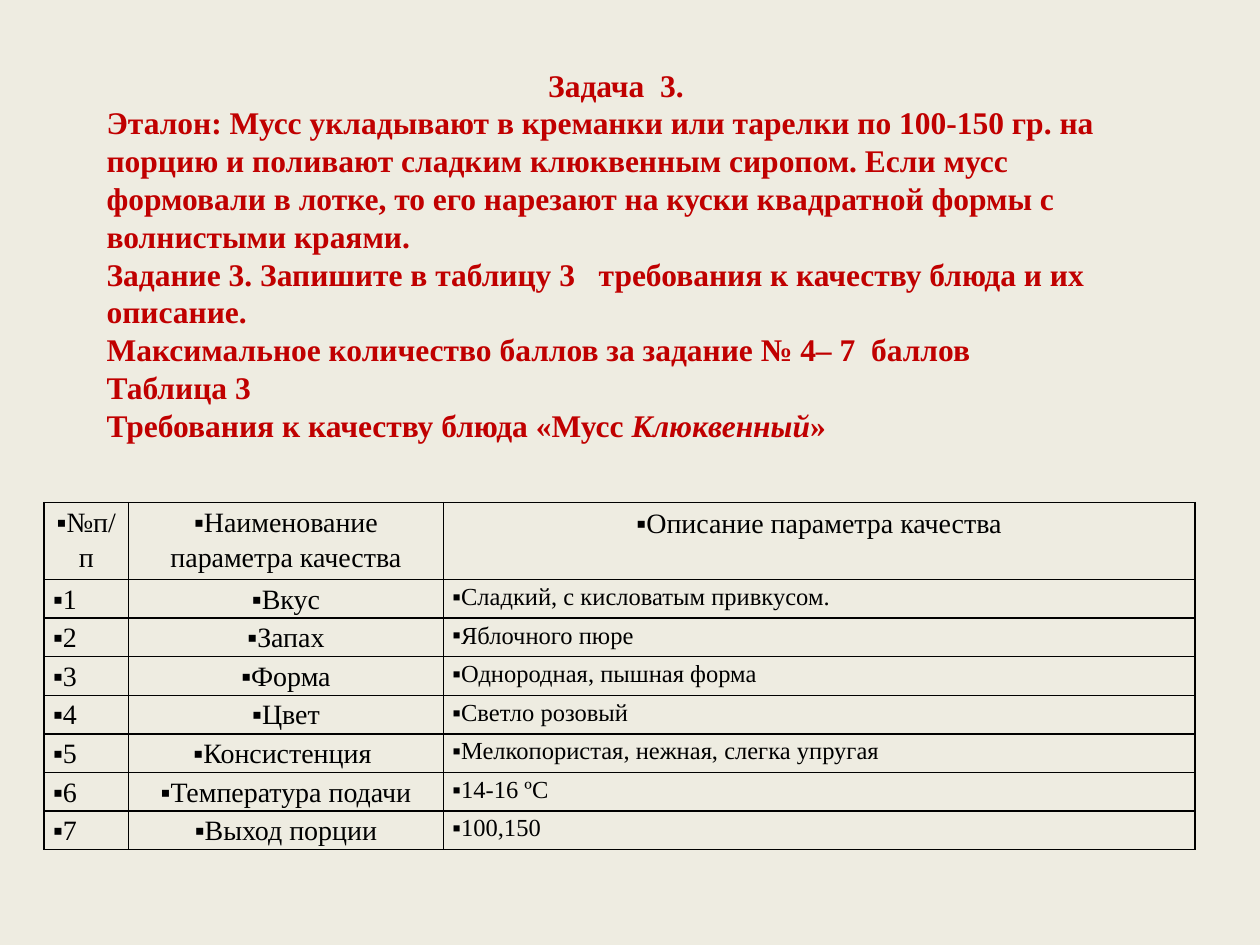
from dataclasses import dataclass

from lxml.etree import SubElement
from pptx import Presentation
from pptx.dml.color import RGBColor
from pptx.enum.text import MSO_ANCHOR, PP_ALIGN as Align
from pptx.oxml.ns import qn
from pptx.util import Cm, Pt


@dataclass(frozen=True)
class Theme:
    font: str = "Times New Roman"
    background: str = "EEECE1"
    accent: str = "C00000"
    ink: str = "000000"
    task_size: int = 18
    table_size: int = 16
    answer_size: int = 14
    border: float = 1


THEME = Theme()

TASK = [
    [("Задача  3. ", False)],
    [("Эталон: Мусс укладывают в креманки или тарелки по 100-150 гр. на порцию "
      "и поливают сладким клюквенным сиропом. Если мусс формовали в лотке, то его "
      "нарезают на куски квадратной формы с волнистыми краями.", False)],
    [("Задание 3. Запишите в таблицу 3   требования к качеству блюда и их описание.", False)],
    [("Максимальное количество баллов за задание № 4– 7  баллов", False)],
    [("Таблица 3", False)],
    [("Требования к качеству блюда «Мусс ", False), ("Клюквенный", True), ("»", False)],
]

HEADER = ("№п/п", "Наименование параметра качества", "Описание параметра качества")
QUALITIES = [
    ("Вкус", "Сладкий, с кисловатым привкусом."),
    ("Запах", "Яблочного пюре"),
    ("Форма", "Однородная, пышная форма"),
    ("Цвет", "Светло розовый"),
    ("Консистенция ", "Мелкопористая, нежная, слегка упругая"),
    ("Температура подачи", "14-16 ºС"),
    ("Выход порции", "100,150"),
]


def add_run(p, text, size, color, bold=False, italic=False):
    r = p.add_run()
    r.text = text
    r.font.name = THEME.font
    r.font.size = Pt(size)
    r.font.bold = bold
    r.font.italic = italic
    r.font.color.rgb = RGBColor.from_string(color)


def add_bullet(p):
    pPr = p._p.get_or_add_pPr()
    pPr.set("marL", "0")
    pPr.set("indent", "0")
    color = SubElement(pPr, qn("a:buClr"))
    SubElement(color, qn("a:srgbClr"), val=THEME.ink)
    SubElement(pPr, qn("a:buFont"), typeface=THEME.font)
    SubElement(pPr, qn("a:buChar"), char="▪")


def add_borders(cell):
    tcPr = cell._tc.get_or_add_tcPr()
    for side in ("lnL", "lnR", "lnT", "lnB"):
        line = SubElement(tcPr, qn(f"a:{side}"), w=str(Pt(THEME.border)))
        fill = SubElement(line, qn("a:solidFill"))
        SubElement(fill, qn("a:srgbClr"), val=THEME.ink)


def fill_cell(cell, text, size, centred, compact=True):
    """Compact cells have narrow margins and looser lines."""
    add_borders(cell)
    cell.fill.background()
    p = cell.text_frame.paragraphs[0]
    p.alignment = Align.CENTER if centred else Align.LEFT
    p.space_before = Pt(size * 0.2)
    if compact:
        p.line_spacing = 1.15
        cell.margin_left = cell.margin_right = Cm(0.18)
        cell.margin_top = cell.margin_bottom = 0
    add_bullet(p)
    add_run(p, text, size, THEME.ink)


def add_task(s, left, top, width, height):
    tf = s.shapes.add_textbox(left, top, width, height).text_frame
    tf.word_wrap = True
    tf.vertical_anchor = MSO_ANCHOR.TOP
    for i, runs in enumerate(TASK):
        p = tf.add_paragraph() if i else tf.paragraphs[0]
        p.alignment = Align.LEFT if i else Align.CENTER
        for text, italic in runs:
            add_run(p, text, THEME.task_size, THEME.accent, True, italic)


def add_quality_table(s, left, top, width, height):
    rows = len(QUALITIES) + 1
    table = s.shapes.add_table(rows, len(HEADER), left, top, width, height).table
    table.first_row = table.horz_banding = False

    number_width, name_width = Cm(1.7), Cm(6.35)
    widths = (number_width, name_width, width - number_width - name_width)
    for column, column_width in zip(table.columns, widths):
        column.width = column_width
    # The header row is twice as high as the others
    unit = height // (rows + 1)
    for i, row in enumerate(table.rows):
        row.height = unit if i else 2 * unit

    for col, text in enumerate(HEADER):
        fill_cell(table.cell(0, col), text, THEME.table_size, True, compact=col < 2)
    for i, (name, answer) in enumerate(QUALITIES, start=1):
        fill_cell(table.cell(i, 0), str(i), THEME.table_size, False)
        fill_cell(table.cell(i, 1), name, THEME.table_size, True)
        fill_cell(table.cell(i, 2), answer, THEME.answer_size, False)


def main():
    prs = Presentation()
    prs.slide_width, prs.slide_height = Cm(25.4), Cm(19.05)
    s = prs.slides.add_slide(prs.slide_layouts[6])
    s.background.fill.solid()
    s.background.fill.fore_color.rgb = RGBColor.from_string(THEME.background)
    add_quality_table(s, Cm(0.89), Cm(10.13), Cm(23.2), Cm(7))
    add_task(s, Cm(1.9), Cm(1.2), Cm(21.2), Cm(8.7))
    prs.save("out.pptx")


if __name__ == "__main__":
    main()
